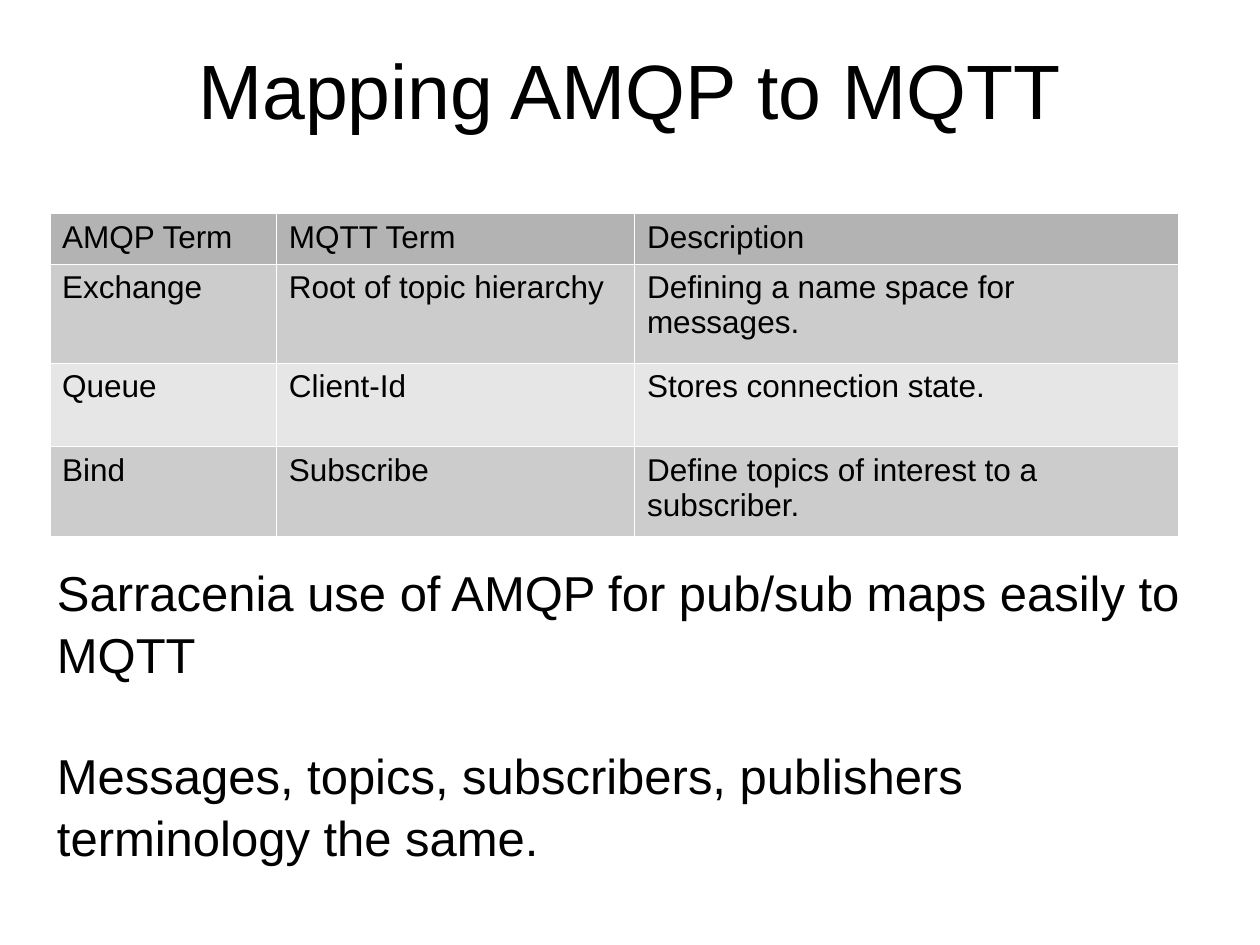
from lxml.etree import SubElement
from pptx import Presentation
from pptx.dml.color import RGBColor
from pptx.enum.text import MSO_ANCHOR as Anchor, PP_ALIGN as Align
from pptx.oxml.ns import qn
from pptx.util import Cm, Pt


def rgb(value):
    return RGBColor.from_string(value)


def write(tf, text, size=18, align=Align.LEFT, spacing=None, gap=0):
    """Write one paragraph per line of text, with gap points between them."""
    for i, line in enumerate(text.split("\n")):
        p = tf.add_paragraph() if i else tf.paragraphs[0]
        p.alignment = align
        if spacing:
            p.line_spacing = spacing
        if i and gap:
            p.space_before = Pt(gap)
        r = p.add_run()
        r.text = line
        r.font.name = Deck.font
        r.font.size = Pt(size)
        r.font.color.rgb = rgb(Deck.ink)


def set_borders(cell, color, width):
    tcPr = cell._tc.get_or_add_tcPr()
    for i, side in enumerate(("a:lnL", "a:lnR", "a:lnT", "a:lnB")):
        ln = SubElement(tcPr, qn(side), w=str(Pt(width)))
        fill = SubElement(ln, qn("a:solidFill"))
        SubElement(fill, qn("a:srgbClr"), val=color)
        tcPr.remove(ln)
        tcPr.insert(i, ln)  # borders come before the fill


class Deck:
    font = "Arial"
    ink = "000000"
    header = "B3B3B3"
    bands = ("CCCCCC", "E6E6E6")
    border = "FFFFFF"

    def __init__(self, width, height):
        self.prs = Presentation()
        self.prs.slide_width, self.prs.slide_height = Cm(width), Cm(height)
        self.s = self.prs.slides.add_slide(self.prs.slide_layouts[6])

    def text(self, box, text, inset=(0.25, 0.13), anchor=Anchor.TOP, **style):
        tf = self.s.shapes.add_textbox(*map(Cm, box)).text_frame
        tf.word_wrap = True
        tf.vertical_anchor = anchor
        tf.margin_left = tf.margin_right = Cm(inset[0])
        tf.margin_top = tf.margin_bottom = Cm(inset[1])
        write(tf, text, **style)

    def table(self, left, top, widths, heights, rows):
        frame = self.s.shapes.add_table(
            len(rows), len(widths), Cm(left), Cm(top),
            Cm(sum(widths)), Cm(sum(heights)))
        table = frame.table
        for column, width in zip(table.columns, widths):
            column.width = Cm(width)
        for i, (height, row) in enumerate(zip(heights, rows)):
            table.rows[i].height = Cm(height)
            color = self.bands[(i - 1) % 2] if i else self.header
            for j, text in enumerate(row):
                cell = table.cell(i, j)
                cell.fill.solid()
                cell.fill.fore_color.rgb = rgb(color)
                set_borders(cell, self.border, 0.06)
                write(cell.text_frame, text)


def main():
    deck = Deck(25.4, 19.05)
    deck.text((1.27, 0.2, 22.86, 3.18), "Mapping AMQP to MQTT", inset=(0, 0),
              anchor=Anchor.MIDDLE, size=44, align=Align.CENTER)
    deck.table(1, 4.3, (4.57, 7.22, 10.95), (0.97, 2, 1.68, 1.8), [
        ("AMQP Term", "MQTT Term", "Description"),
        ("Exchange", "Root of topic hierarchy",
         "Defining a name space for messages."),
        ("Queue", "Client-Id", "Stores connection state."),
        ("Bind", "Subscribe", "Define topics of interest to a subscriber."),
    ])
    deck.text((0.9, 11.15, 23.52, 5.74),
              "Sarracenia use of AMQP for pub/sub maps easily to MQTT\n"
              "Messages, topics, subscribers, publishers terminology the same.",
              size=28, spacing=1.05, gap=34)
    deck.prs.save("out.pptx")


if __name__ == "__main__":
    main()
